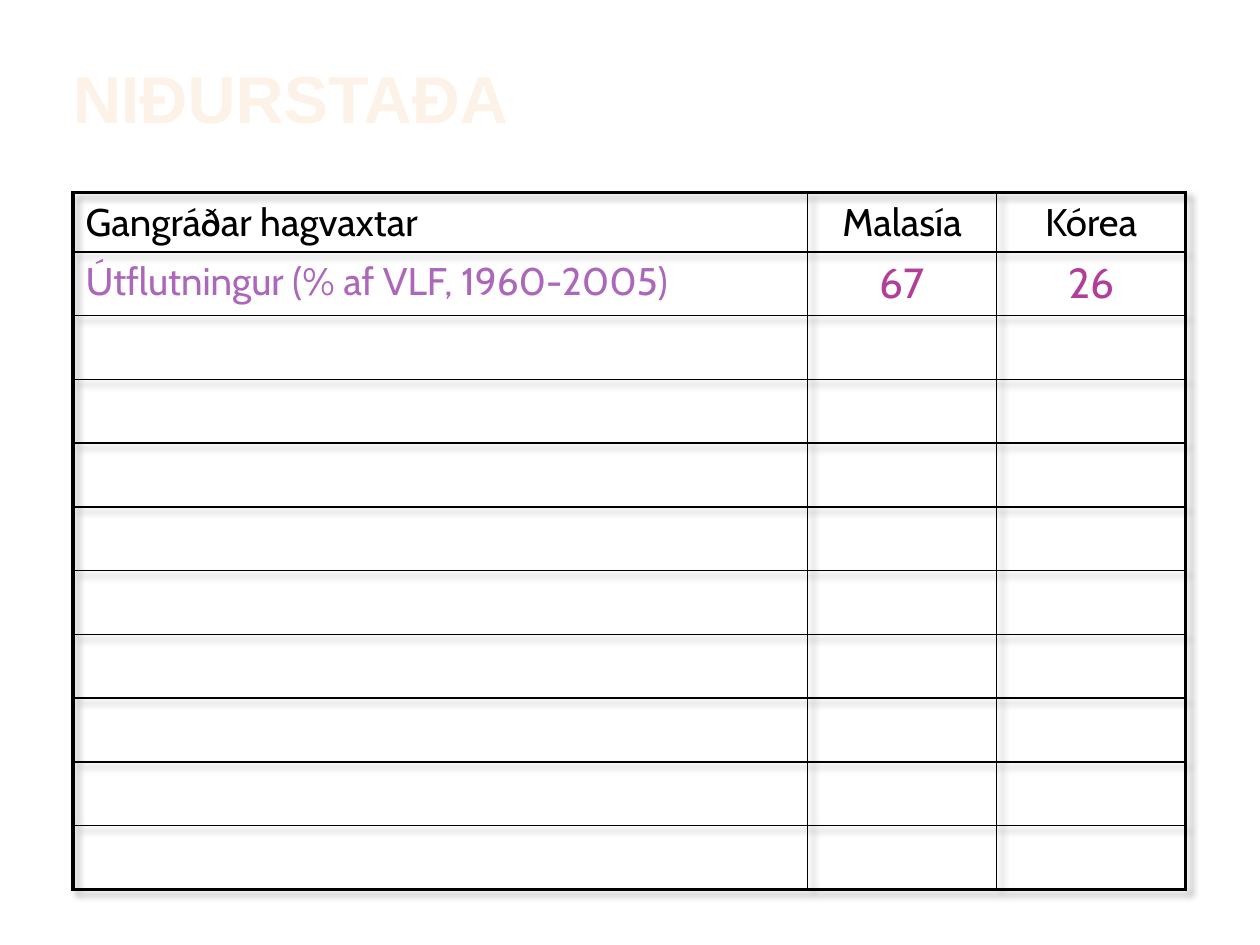
from lxml import etree
from pptx import Presentation
from pptx import util as u
from pptx.dml.color import RGBColor
from pptx.enum import text
from pptx.oxml import parse_xml
from pptx.oxml.ns import nsdecls

BLACK = RGBColor(0x00, 0x00, 0x00)
CREAM = RGBColor(0xFD, 0xF2, 0xE8)
LILAC = RGBColor(0xAC, 0x66, 0xBB)
MAGENTA = RGBColor(0xB1, 0x3F, 0x9A)

TITLE = "NIÐURSTAÐA"
HEADER = ("Gangráðar hagvaxtar", "Malasía", "Kórea")
EXPORTS = ("Útflutningur (% af VLF, 1960-2005)", "67", "26")
EMPTY_ROWS = 9
ROWS = [HEADER, EXPORTS] + [("", "", "")] * EMPTY_ROWS

LEFT, TOP = 0.58, 1.53
COLUMN_WIDTHS = (5.83, 1.5, 1.5)
HEADER_HEIGHT, BODY_HEIGHT = 0.47, 0.506
INNER_LINE, OUTER_LINE = 1, 2.25


def add_border(cell, side, points):
    cell_properties = cell._tc.get_or_add_tcPr()
    cell_properties.append(parse_xml(
        f'<a:ln{side} {nsdecls("a")} w="{u.Pt(points)}"><a:solidFill>'
        f'<a:srgbClr val="{BLACK}"/></a:solidFill></a:ln{side}>'))


def add_table_shadow(table):
    table._tbl.tblPr.insert(0, parse_xml(
        f'<a:effectLst {nsdecls("a")}><a:outerShdw blurRad="50800" dist="50800" '
        'dir="2700000" algn="tl" rotWithShape="0"><a:srgbClr val="000000">'
        '<a:alpha val="30000"/></a:srgbClr></a:outerShdw></a:effectLst>'))


def style_text(paragraph, font_name, size, color, bold=False):
    font = paragraph.font
    if paragraph.runs:
        font = paragraph.runs[0].font
    font.name, font.size, font.bold = font_name, u.Pt(size), bold
    font.color.rgb = color


def add_title(slide):
    box = slide.shapes.add_textbox(u.Inches(LEFT), u.Inches(0.45),
                                   u.Inches(sum(COLUMN_WIDTHS)), u.Inches(0.6))
    frame = box.text_frame
    frame.word_wrap = True
    frame.margin_left = frame.margin_right = frame.margin_top = frame.margin_bottom = 0
    frame.text = TITLE
    style_text(frame.paragraphs[0], "Arial", 38, CREAM, bold=True)


def add_growth_table(slide):
    heights = [HEADER_HEIGHT] + [BODY_HEIGHT] * (len(ROWS) - 1)
    table = slide.shapes.add_table(
        len(ROWS), len(HEADER), u.Inches(LEFT), u.Inches(TOP),
        u.Inches(sum(COLUMN_WIDTHS)), u.Inches(sum(heights))).table
    table.first_row = table.horz_banding = False
    add_table_shadow(table)
    for column, width in zip(table.columns, COLUMN_WIDTHS):
        column.width = u.Inches(width)
    for row, height in zip(table.rows, heights):
        row.height = u.Inches(height)

    last_row, last_column = len(ROWS) - 1, len(HEADER) - 1
    for r, values in enumerate(ROWS):
        for c, value in enumerate(values):
            cell = table.cell(r, c)
            cell.text_frame.text = value
            paragraph = cell.text_frame.paragraphs[0]
            if c > 0:
                paragraph.alignment = text.PP_ALIGN.CENTER
            if r == 0:
                style_text(paragraph, "Cabin", 22, BLACK)
            elif c == 0:
                style_text(paragraph, "Cabin", 22, LILAC)
            else:
                style_text(paragraph, "Cabin", 24, MAGENTA)
            outer_sides = {"L": c == 0, "R": c == last_column,
                           "T": r == 0, "B": r == last_row}
            for side, is_outer in outer_sides.items():
                add_border(cell, side, OUTER_LINE if is_outer else INNER_LINE)
            cell.fill.background()


def main():
    presentation = Presentation()
    presentation.slide_width, presentation.slide_height = u.Inches(10), u.Inches(7.5)
    slide = presentation.slides.add_slide(presentation.slide_layouts[6])
    add_title(slide)
    add_growth_table(slide)
    presentation.save("out.pptx")


if __name__ == "__main__":
    main()
